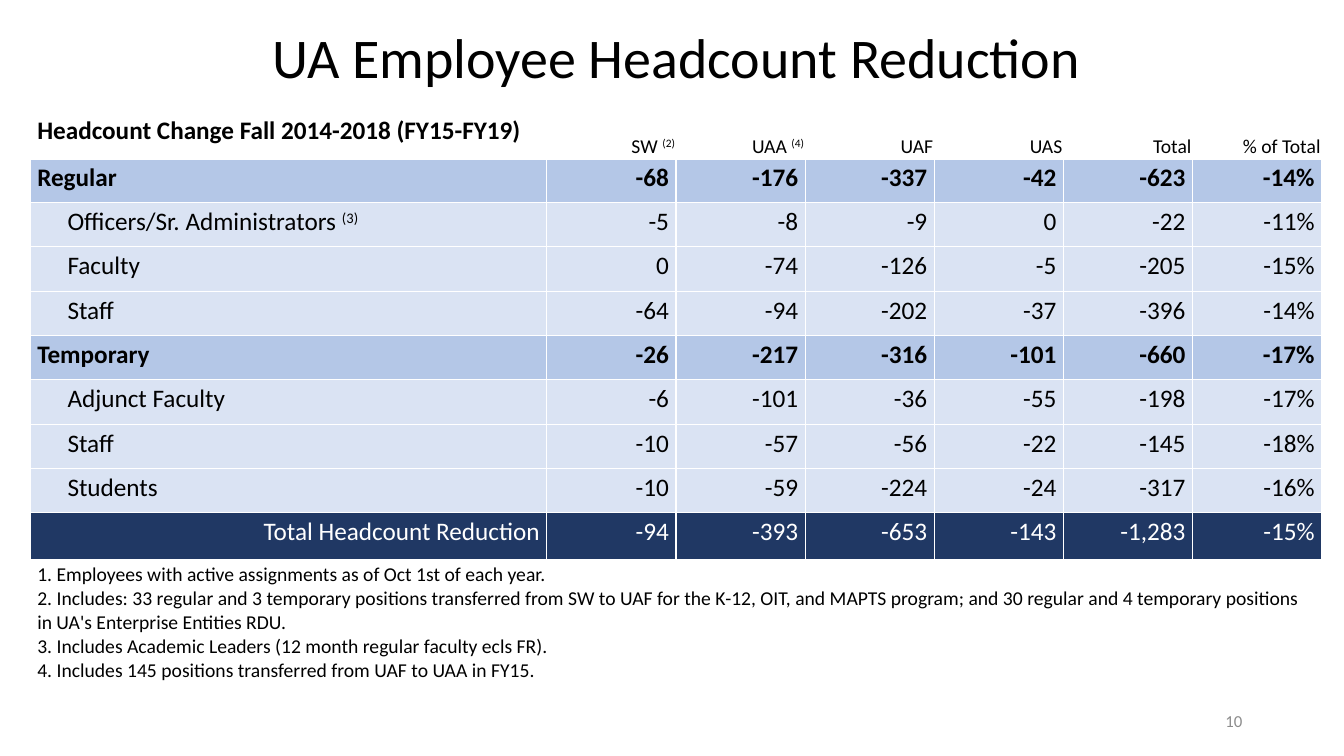
from lxml.etree import SubElement
from pptx import Presentation
from pptx.dml.color import RGBColor
from pptx.enum.text import MSO_ANCHOR, PP_ALIGN
from pptx.oxml import parse_xml
from pptx.oxml.ns import nsdecls, qn
from pptx.util import Inches, Pt

FONT = "Calibri"
BLACK = RGBColor(0x00, 0x00, 0x00)
WHITE = RGBColor(0xFF, 0xFF, 0xFF)
GRAY = RGBColor(0x8C, 0x8C, 0x8C)
GROUP_BLUE = RGBColor(0xB4, 0xC7, 0xE7)
DETAIL_BLUE = RGBColor(0xDA, 0xE3, 0xF3)
TOTAL_NAVY = RGBColor(0x20, 0x38, 0x64)

# Boxes are left, top, width, height in inches
TITLE_BOX = (0.96, 0.08, 11.5, 1.03)
TABLE_BOX = (0.3, 1.11, 12.81, 5.84)
NUMBER_BOX = (9.42, 6.95, 3, 0.4)
LABEL_SHARE = 0.4
ROW_HEIGHTS = [0.46] + [0.44] * 8 + [0.46, 1.42]
CELL_MARGINS = (0.07, 0.04, 0.07, 0.04)
HEADING_MARGINS = (0.01, 0.01, 0.01, 0)

# A label is a pair: text and superscript note mark
TABLE_NAME = "Headcount Change Fall 2014-2018 (FY15-FY19)"
HEADINGS = [("SW ", "(2)"), ("UAA ", "(4)"), ("UAF", ""), ("UAS", ""), ("Total", ""), ("% of Total", "")]
ROWS = [
    ("group", ("Regular", ""), ["-68", "-176", "-337", "-42", "-623", "-14%"]),
    ("detail", ("Officers/Sr. Administrators ", "(3)"), ["-5", "-8", "-9", "0", "-22", "-11%"]),
    ("detail", ("Faculty", ""), ["0", "-74", "-126", "-5", "-205", "-15%"]),
    ("detail", ("Staff", ""), ["-64", "-94", "-202", "-37", "-396", "-14%"]),
    ("group", ("Temporary", ""), ["-26", "-217", "-316", "-101", "-660", "-17%"]),
    ("detail", ("Adjunct Faculty", ""), ["-6", "-101", "-36", "-55", "-198", "-17%"]),
    ("detail", ("Staff", ""), ["-10", "-57", "-56", "-22", "-145", "-18%"]),
    ("detail", ("Students", ""), ["-10", "-59", "-224", "-24", "-317", "-16%"]),
    ("total", ("Total Headcount Reduction", ""), ["-94", "-393", "-653", "-143", "-1,283", "-15%"]),
]
ROW_FILLS = {"group": GROUP_BLUE, "detail": DETAIL_BLUE, "total": TOTAL_NAVY}
NOTES = [
    "1. Employees with active assignments as of Oct 1st of each year.",
    "2. Includes: 33 regular and 3 temporary positions transferred from SW to UAF for the K-12, OIT, "
    "and MAPTS program; and 30 regular and 4 temporary positions in UA's Enterprise Entities RDU.",
    "3. Includes Academic Leaders (12 month regular faculty ecls FR).",
    "4. Includes 145 positions transferred from UAF to UAA in FY15.",
]


def add_span(para, text, size, color=BLACK, bold=False, superscript=False):
    span = para.add_run()
    span.text = text
    span.font.name = FONT
    span.font.size = Pt(size)
    span.font.bold = bold
    span.font.color.rgb = color
    if superscript:
        span._r.get_or_add_rPr().set("baseline", "30000")


def add_label(para, label, size, **style):
    text, mark = label
    add_span(para, text, size, **style)
    if mark:
        add_span(para, mark, size, superscript=True, **style)


def add_text(slide, box, text, size, color, align):
    frame = slide.shapes.add_textbox(*map(Inches, box)).text_frame
    frame.word_wrap = True
    frame.vertical_anchor = MSO_ANCHOR.MIDDLE
    para = frame.paragraphs[0]
    para.alignment = align
    add_span(para, text, size, color)
    return para


def style_cell(cell, fill=None, margins=CELL_MARGINS, top=1, bottom=1):
    cell.margin_left, cell.margin_top, cell.margin_right, cell.margin_bottom = map(Inches, margins)
    if fill is None:
        cell.fill.background()
    else:
        cell.fill.solid()
        cell.fill.fore_color.rgb = fill
    properties = cell._tc.get_or_add_tcPr()
    for place, (side, width) in enumerate([("L", 1), ("R", 1), ("T", top), ("B", bottom)]):
        line = parse_xml(f'<a:ln{side} {nsdecls("a")} w="{Pt(width)}"/>')
        color = SubElement(SubElement(line, qn("a:solidFill")), qn("a:srgbClr"))
        color.set("val", str(WHITE))
        properties.insert(place, line)


def fill_heading_row(cells):
    name_cell, *heading_cells = cells
    style_cell(name_cell, bottom=3)
    add_span(name_cell.text_frame.paragraphs[0], TABLE_NAME, 18, bold=True)
    for cell, heading in zip(heading_cells, HEADINGS):
        style_cell(cell, margins=HEADING_MARGINS, bottom=3)
        cell.vertical_anchor = MSO_ANCHOR.BOTTOM
        para = cell.text_frame.paragraphs[0]
        para.alignment = PP_ALIGN.RIGHT
        add_label(para, heading, 14)


def fill_value_row(cells, kind, label, values, top):
    color = WHITE if kind == "total" else BLACK
    for column, (cell, entry) in enumerate(zip(cells, [label] + [(value, "") for value in values])):
        style_cell(cell, ROW_FILLS[kind], top=top)
        para = cell.text_frame.paragraphs[0]
        if column or kind == "total":
            para.alignment = PP_ALIGN.RIGHT
        elif kind == "detail":
            para._p.get_or_add_pPr().set("marL", str(Inches(0.3)))
        add_label(para, entry, 18, color=color, bold=kind == "group")


def fill_notes_row(cells):
    first, last = cells[0], cells[-1]
    first.merge(last)
    for cell in cells:
        style_cell(cell)
    frame = first.text_frame
    for position, note in enumerate(NOTES):
        para = frame.add_paragraph() if position else frame.paragraphs[0]
        add_span(para, note, 14)


def add_headcount_table(slide, box):
    column_count = len(HEADINGS) + 1
    table = slide.shapes.add_table(len(ROW_HEIGHTS), column_count, *map(Inches, box)).table
    table.first_row = table.horz_banding = False
    label_width = box[2] * LABEL_SHARE
    value_width = (box[2] - label_width) / len(HEADINGS)
    for column, width in zip(table.columns, [label_width] + [value_width] * len(HEADINGS)):
        column.width = Inches(width)
    for row, height in zip(table.rows, ROW_HEIGHTS):
        row.height = Inches(height)
    heading_row, *value_rows, notes_row = [list(row.cells) for row in table.rows]
    fill_heading_row(heading_row)
    for position, (cells, entry) in enumerate(zip(value_rows, ROWS)):
        fill_value_row(cells, *entry, top=1 if position else 3)
    fill_notes_row(notes_row)


def main():
    deck = Presentation()
    deck.slide_width, deck.slide_height = Inches(13.33), Inches(7.5)
    slide = deck.slides.add_slide(deck.slide_layouts[6])
    # Table with headings, values and notes
    add_headcount_table(slide, TABLE_BOX)
    # Title
    title = add_text(slide, TITLE_BOX, "UA Employee Headcount Reduction", 40, BLACK, PP_ALIGN.CENTER)
    title.line_spacing = 0.9
    # Page number
    add_text(slide, NUMBER_BOX, "10", 12, GRAY, PP_ALIGN.RIGHT)
    deck.save("out.pptx")


if __name__ == "__main__":
    main()
